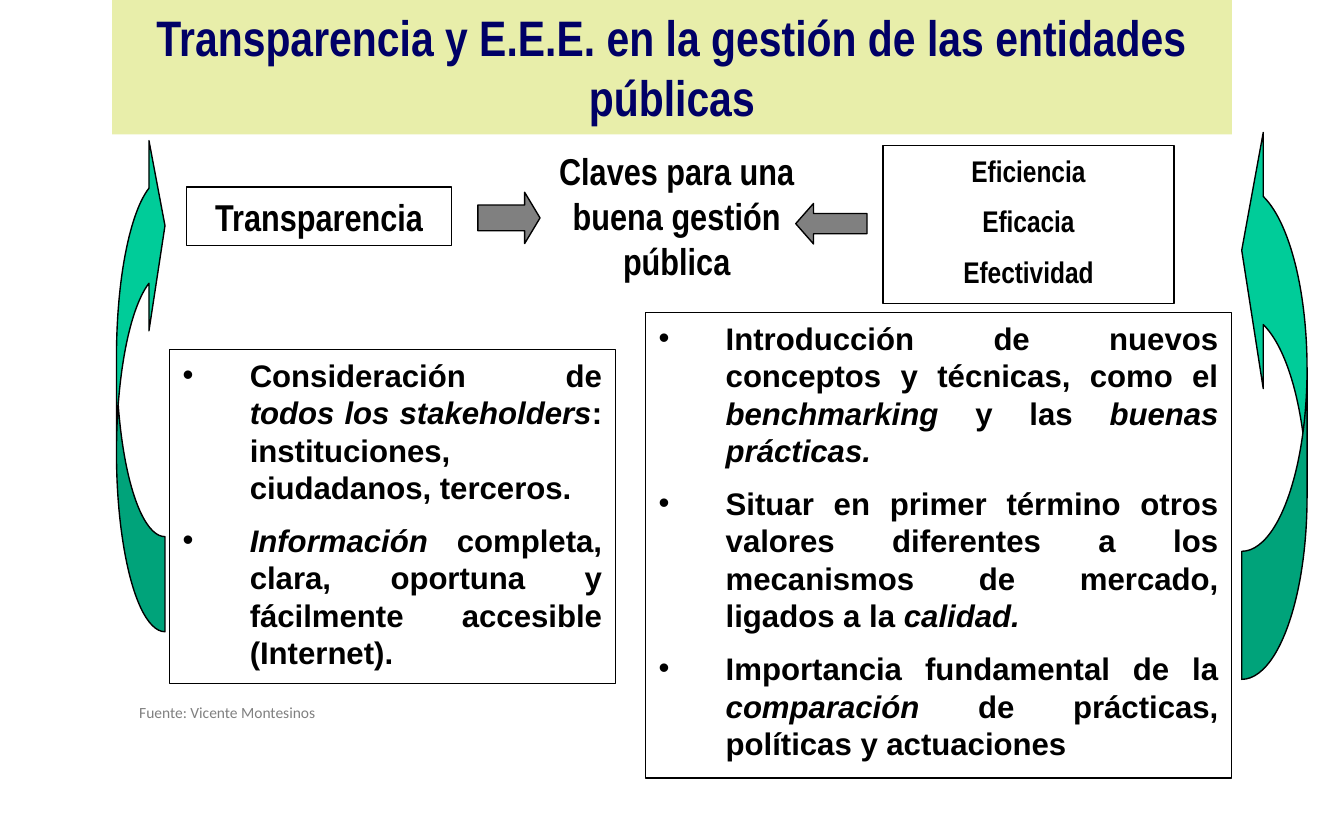
from dataclasses import dataclass

from lxml.etree import SubElement
from pptx import Presentation
from pptx.dml.color import RGBColor
from pptx.enum.shapes import MSO_SHAPE as SHAPE
from pptx.enum.text import MSO_ANCHOR as ANCHOR, PP_ALIGN as ALIGN
from pptx.oxml.ns import qn
from pptx.util import Pt


@dataclass(frozen=True)
class Theme:
    """Colours, fonts and type sizes of the slide."""
    band: str = "E8EEAA"
    navy: str = "000066"
    ink: str = "000000"
    grey: str = "808080"
    green: str = "00CC99"
    narrow: str = "Arial Narrow"
    body: str = "Arial"
    note: str = "Calibri"
    title_size: float = 26.7
    key_size: float = 20
    value_size: float = 16
    bullet_size: float = 16.7
    note_size: float = 8.3
    line: float = 0.75


T = Theme()

TITLE = "Transparencia y E.E.E. en la gestión de las entidades públicas"
VALUES = ["Eficiencia", "Eficacia", "Efectividad"]
TRANSPARENCY = [
    "Consideración de *todos los stakeholders*: instituciones, ciudadanos, terceros.",
    "*Información* completa, clara, oportuna y fácilmente accesible (Internet).",
]
MANAGEMENT = [
    "Introducción de nuevos conceptos y técnicas, como el *benchmarking* y las *buenas prácticas.*",
    "Situar en primer término otros valores diferentes a los mecanismos de mercado, "
    "ligados a la *calidad.*",
    "Importancia fundamental de la *comparación* de prácticas, políticas y actuaciones",
]


def add_box(s, kind, box, fill=None, line=None):
    """Add a preset shape with an optional fill and outline."""
    sp = s.shapes.add_shape(kind, *map(Pt, box))
    sp.shadow.inherit = False
    if fill:
        sp.fill.solid()
        sp.fill.fore_color.rgb = RGBColor.from_string(fill)
    else:
        sp.fill.background()
    if line:
        sp.line.color.rgb = RGBColor.from_string(line)
        sp.line.width = Pt(T.line)
    else:
        sp.line.fill.background()
    return sp


def add_bullet(p, indent=36):
    """Give a paragraph a round bullet with a hanging indent."""
    pPr = p._p.get_or_add_pPr()
    pPr.set("marL", str(Pt(indent)))
    pPr.set("indent", str(-Pt(indent)))
    SubElement(pPr, qn("a:buFont")).set("typeface", T.body)
    SubElement(pPr, qn("a:buChar")).set("char", "•")


def write(sp, lines, size, font=T.narrow, color=T.ink, bold=True,
          align=ALIGN.CENTER, bullets=False):
    """Write paragraphs half a line apart; asterisks enclose italics."""
    tf = sp.text_frame
    tf.word_wrap = True
    tf.vertical_anchor = ANCHOR.TOP
    for i, line in enumerate(lines):
        p = tf.paragraphs[0] if i == 0 else tf.add_paragraph()
        p.alignment = align
        p.space_before = Pt(size / 2 if i else 0)
        if bullets:
            add_bullet(p)
        for j, part in enumerate(line.split("*")):
            if part:
                r = p.add_run()
                r.text = part
                style = {"name": font, "size": Pt(size), "bold": bold, "italic": j % 2 == 1}
                for key, value in style.items():
                    setattr(r.font, key, value)
                r.font.color.rgb = RGBColor.from_string(color)


def add_title(s, box):
    """Place the title band."""
    write(add_box(s, SHAPE.RECTANGLE, box, T.band), [TITLE], T.title_size, color=T.navy)


def add_keys(s, box):
    """Place the central message with the two keys that point to it."""
    x, y, w, h = box
    label = s.shapes.add_textbox(*map(Pt, (x + 189.5, y - 2, 146, 80)))
    write(label, ["Claves para una buena gestión pública"], T.key_size)
    key = add_box(s, SHAPE.RECTANGLE, (x, y + 22.2, 142, 31.5), line=T.ink)
    write(key, ["Transparencia"], T.key_size)
    values = add_box(s, SHAPE.RECTANGLE, (x + w - 156, y, 156, h), line=T.ink)
    write(values, VALUES, T.value_size)
    arrows = [
        (SHAPE.RIGHT_ARROW, (x + 156, y + 25, 33.3, 27.5), 0.3),
        (SHAPE.LEFT_ARROW, (x + 326.3, y + 31, 38.2, 21.7), 0.44),
    ]
    for kind, place, head in arrows:
        add_box(s, kind, place, T.grey, T.ink).adjustments[1] = head


def add_points(s, box, points):
    """Place a framed list of bullet points."""
    sp = add_box(s, SHAPE.RECTANGLE, box, line=T.ink)
    write(sp, points, T.bullet_size, T.body, align=ALIGN.JUSTIFY, bullets=True)


def add_side_arrow(s, box, kind, width):
    """Place a curved arrow that rises along the side of the slide."""
    sp = add_box(s, kind, box, T.green, T.ink)
    sp.element.spPr.get_or_add_xfrm().set("flipV", "1")
    for i, value in enumerate((width, 2 * width, 0.33)):
        sp.adjustments[i] = value


def add_source(s, box):
    """Place the source note."""
    write(s.shapes.add_textbox(*map(Pt, box)), ["Fuente: Vicente Montesinos"],
          T.note_size, T.note, T.grey, bold=False, align=ALIGN.LEFT)


def main():
    """Build the slide and save it."""
    prs = Presentation()
    prs.slide_width, prs.slide_height = Pt(720), Pt(450)
    s = prs.slides.add_slide(prs.slide_layouts[6])
    add_source(s, (67.5, 373, 358, 13))
    add_title(s, (60, 0, 600, 72))
    add_keys(s, (100, 78, 529, 84.7))
    add_points(s, (90.7, 187.2, 239, 179), TRANSPARENCY)
    add_points(s, (345.7, 167.4, 314.2, 249.5), MANAGEMENT)
    add_side_arrow(s, (665.2, 65.5, 35, 298.5), SHAPE.CURVED_LEFT_ARROW, 1.96)
    add_side_arrow(s, (62.4, 70, 26, 268.5), SHAPE.CURVED_RIGHT_ARROW, 1.96)
    prs.save("out.pptx")


if __name__ == "__main__":
    main()
